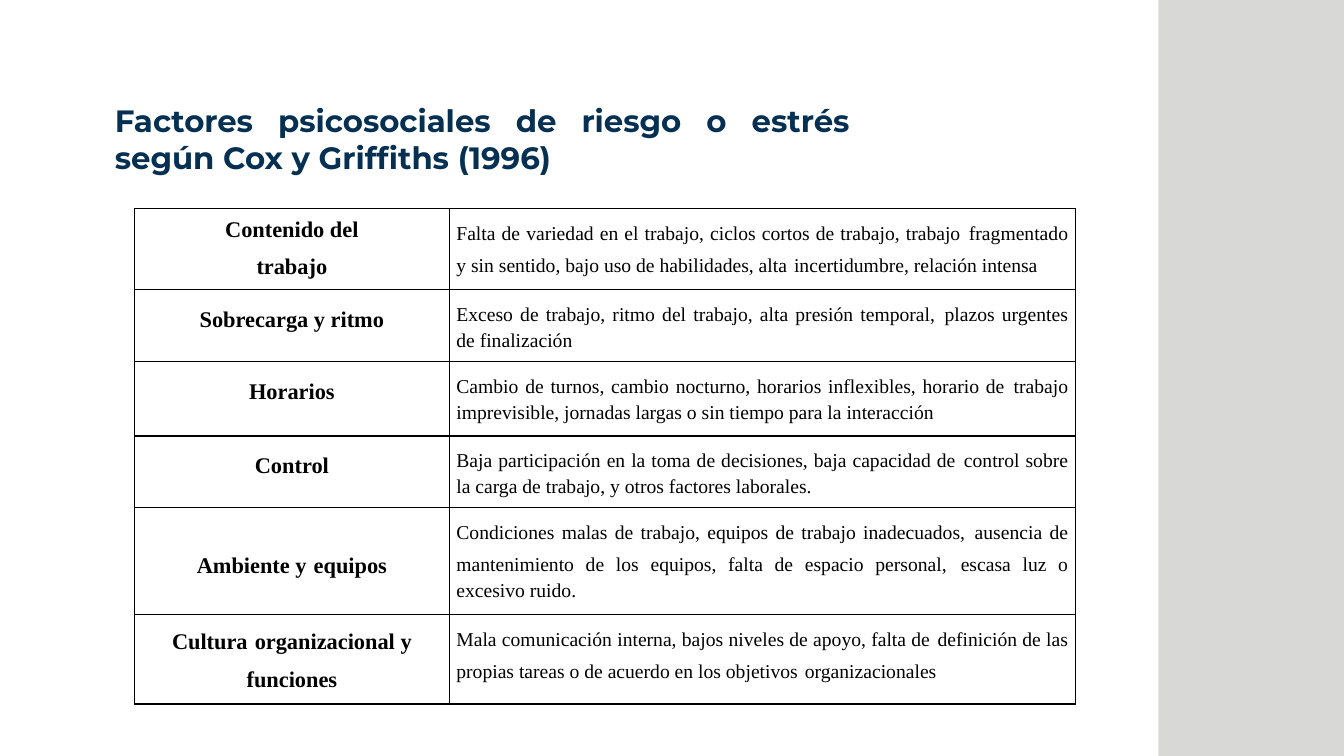
"""Build the slide on psychosocial risk factors."""
from dataclasses import dataclass

from lxml.etree import SubElement as Sub
from pptx import Presentation
from pptx.dml.color import RGBColor as Rgb
from pptx.enum.shapes import MSO_SHAPE as Form
from pptx.enum.text import MSO_ANCHOR as Anchor, MSO_AUTO_SIZE as Fit, PP_ALIGN as Align
from pptx.oxml.ns import qn
from pptx.util import Pt


@dataclass(frozen=True)
class Theme:
    navy: str = "053052"
    gray: str = "D8D9D7"
    ink: str = "000000"
    head: str = "Montserrat"
    body: str = "Times New Roman"
    title: int = 22
    label: int = 16
    wide: int = 20
    text: int = 14
    gap: int = 18
    rule: float = 0.96


class Deck:
    def __init__(self, theme):
        self.theme = theme
        self.deck = Presentation()
        self.deck.slide_width, self.deck.slide_height = Pt(960), Pt(540)
        self.slide = self.deck.slides.add_slide(self.deck.slide_layouts[5])

    def run(self, para, text, size, font, color, bold):
        run = para.add_run()
        run.text = text
        run.font.size, run.font.name, run.font.bold = Pt(size), font, bold
        run.font.color.rgb = Rgb.from_string(color)

    def band(self, left, top, width, height):
        box = self.slide.shapes.add_shape(
            Form.RECTANGLE, Pt(left), Pt(top), Pt(width), Pt(height))
        box.shadow.inherit = False
        box.fill.solid()
        box.fill.fore_color.rgb = Rgb.from_string(self.theme.gray)
        box.line.fill.background()

    def title(self, text, left, top, width, height):
        box = self.slide.shapes.title
        box.left, box.top, box.width, box.height = map(Pt, (left, top, width, height))
        frame = box.text_frame
        frame.word_wrap, frame.auto_size = True, Fit.SHAPE_TO_FIT_TEXT
        frame.vertical_anchor = Anchor.MIDDLE
        frame.margin_left = frame.margin_right = Pt(2)
        frame.margin_top = frame.margin_bottom = Pt(2)
        para = frame.paragraphs[0]
        para.alignment = Align.JUSTIFY
        look = self.theme
        self.run(para, text, look.title, look.head, look.navy, True)

    def edge(self, cell):
        props = cell._tc.get_or_add_tcPr()
        for side in ("lnL", "lnR", "lnT", "lnB"):
            line = Sub(props, qn("a:" + side), w=str(Pt(self.theme.rule)))
            fill = Sub(line, qn("a:solidFill"))
            Sub(fill, qn("a:srgbClr"), val=self.theme.ink)
        cell.fill.background()

    def cell(self, cell, lines, align, size, gap, bold):
        self.edge(cell)
        cell.margin_left = cell.margin_right = Pt(5)
        cell.margin_top = cell.margin_bottom = Pt(3.6)
        frame = cell.text_frame
        for i, (space, text) in enumerate(lines):
            para = frame.add_paragraph() if i else frame.paragraphs[0]
            para.alignment, para.line_spacing = align, space
            for j, part in enumerate(text.split("|")):
                if j:
                    self.run(para, " ", gap, self.theme.body, self.theme.ink, bold)
                self.run(para, part, size, self.theme.body, self.theme.ink, bold)

    def table(self, rows, left, top, cols):
        look = self.theme
        high = sum(row[0] for row in rows)
        grid = self.slide.shapes.add_table(
            len(rows), len(cols), Pt(left), Pt(top), Pt(sum(cols)), Pt(high)).table
        grid.first_row = grid.horz_banding = False
        for col, width in zip(grid.columns, cols):
            col.width = Pt(width)
        for i, (height, anchor, label, text) in enumerate(rows):
            grid.rows[i].height = Pt(height)
            name, note = grid.cell(i, 0), grid.cell(i, 1)
            self.cell(name, label, Align.CENTER, look.label, look.wide, True)
            self.cell(note, [(1.15, text)], Align.JUSTIFY, look.text, look.gap, False)
            name.vertical_anchor = anchor

    def save(self):
        self.deck.save("out.pptx")


ROWS = [
    (58, Anchor.TOP, [(1.15, "Contenido del"), (1.5, "trabajo")],
     "Falta de variedad en el trabajo, ciclos cortos de trabajo, trabajo|"
     "fragmentado y sin sentido, bajo uso de habilidades, alta|"
     "incertidumbre, relación intensa"),
    (51, Anchor.TOP, [(1.5, "Sobrecarga y ritmo")],
     "Exceso de trabajo, ritmo del trabajo, alta presión temporal,|"
     "plazos urgentes de finalización"),
    (53, Anchor.TOP, [(1.5, "Horarios")],
     "Cambio de turnos, cambio nocturno, horarios inflexibles, horario de|"
     "trabajo imprevisible, jornadas largas o sin tiempo para la interacción"),
    (51, Anchor.TOP, [(1.5, "Control")],
     "Baja participación en la toma de decisiones, baja capacidad de|"
     "control sobre la carga de trabajo, y otros factores laborales."),
    (76, Anchor.MIDDLE, [(1.15, "Ambiente y|equipos")],
     "Condiciones malas de trabajo, equipos de trabajo inadecuados,|"
     "ausencia de mantenimiento de los equipos, falta de espacio personal,|"
     "escasa luz o excesivo ruido."),
    (64, Anchor.TOP, [(1.15, "Cultura|organizacional y"), (1.5, "funciones")],
     "Mala comunicación interna, bajos niveles de apoyo, falta de|"
     "definición de las propias tareas o de acuerdo en los objetivos|"
     "organizacionales"),
]


def main():
    deck = Deck(Theme())
    deck.band(827.5, 0, 132.5, 540)
    deck.title("Factores psicosociales de riesgo o estrés según Cox y Griffiths (1996)",
               80, 70.5, 529, 57)
    deck.table(ROWS, 96, 149, (225, 447))
    deck.save()


if __name__ == "__main__":
    main()
